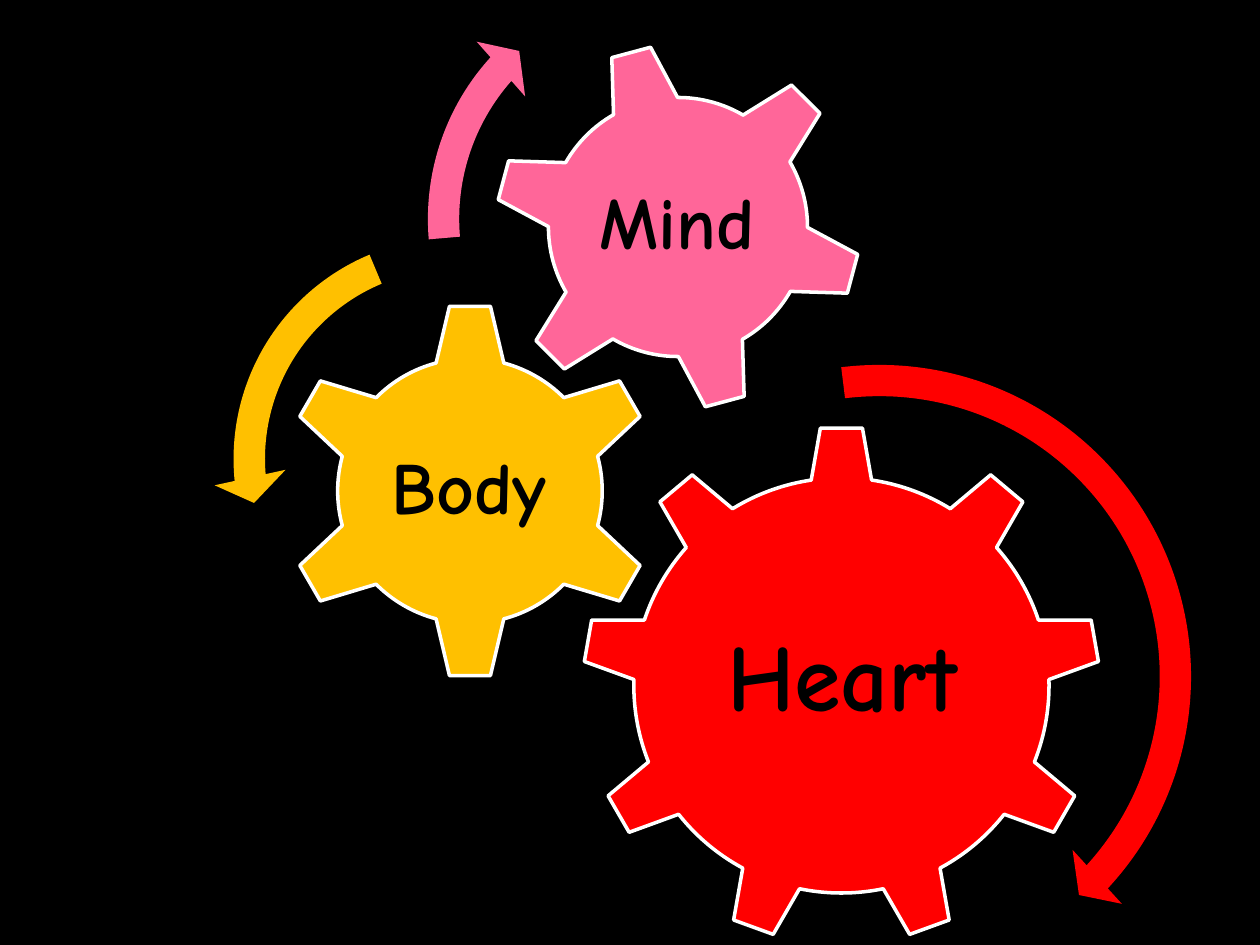
from dataclasses import dataclass

from pptx import Presentation
from pptx.dml.color import RGBColor
from pptx.enum.shapes import MSO_SHAPE
from pptx.enum.text import MSO_ANCHOR, PP_ALIGN
from pptx.util import Emu, Pt

PX_PER_INCH = 126
GEAR_6, GEAR_9 = MSO_SHAPE.GEAR_6, MSO_SHAPE.GEAR_9
CLOCKWISE, COUNTER = MSO_SHAPE.CIRCULAR_ARROW, MSO_SHAPE.LEFT_CIRCULAR_ARROW
MIDDLE, CENTER = MSO_ANCHOR.MIDDLE, PP_ALIGN.CENTER


def px(n):
    return Emu(round(n * 914400 / PX_PER_INCH))


@dataclass(frozen=True)
class Theme:
    font: str = "Comic Neue"
    background: str = "000000"
    ink: str = "000000"
    outline: str = "FFFFFF"
    heart: str = "FF0000"
    body: str = "FFC000"
    mind: str = "FF6699"
    large: int = 54
    medium: int = 42
    outline_width: int = 2


def write(sp, text, *, font, size, color, bold=True, inset=8):
    tf = sp.text_frame
    tf.word_wrap = True
    tf.vertical_anchor = MIDDLE
    tf.margin_left = tf.margin_right = px(inset)
    tf.margin_top = tf.margin_bottom = px(inset)
    p = tf.paragraphs[0]
    p.alignment = CENTER
    p.line_spacing = 0.9
    r = p.add_run()
    r.text = text
    r.font.name = font
    r.font.size = Pt(size)
    r.font.bold = bold
    r.font.color.rgb = RGBColor.from_string(color)


class GearSlide:
    """Draws on one slide in one theme; boxes are left, top, width, height in px."""

    def __init__(self, slide, theme):
        self.slide, self.theme = slide, theme
        fill = slide.background.fill
        fill.solid()
        fill.fore_color.rgb = RGBColor.from_string(theme.background)

    def shape(self, kind, box, color):
        sp = self.slide.shapes.add_shape(kind, *map(px, box))
        sp.shadow.inherit = False
        sp.fill.solid()
        sp.fill.fore_color.rgb = RGBColor.from_string(color)
        return sp

    def gear(self, kind, box, color, rotation=0):
        sp = self.shape(kind, box, color)
        sp.rotation = rotation
        sp.line.color.rgb = RGBColor.from_string(self.theme.outline)
        sp.line.width = Pt(self.theme.outline_width)

    def label(self, text, box, size):
        sp = self.slide.shapes.add_textbox(*map(px, box))
        write(sp, text, font=self.theme.font, size=size, color=self.theme.ink)

    def arrow(self, kind, box, color, adjustments):
        sp = self.shape(kind, box, color)
        sp.line.fill.background()
        for i, value in enumerate(adjustments):
            sp.adjustments[i] = value


def main():
    prs = Presentation()
    prs.slide_width, prs.slide_height = px(1260), px(945)
    theme = Theme()
    s = GearSlide(prs.slides.add_slide(prs.slide_layouts[6]), theme)

    s.gear(GEAR_9, (582, 426, 519, 519), theme.heart)
    s.label("Heart", (687, 547, 311, 267), theme.large)
    s.gear(GEAR_6, (281, 302, 378, 378), theme.body)
    s.label("Body", (375, 398, 188, 186), theme.medium)
    s.gear(GEAR_6, (493, 42, 370, 370), theme.mind, rotation=345)
    s.label("Mind", (573, 122, 208, 208), theme.medium)

    # Adjustments: band width, head angle, end angle, start angle, head width
    s.arrow(CLOCKWISE, (547, 344, 665, 665), theme.heart,
            (0.047, 2.99, 25.57, 157.77, 0.055))
    s.arrow(COUNTER, (213, 217, 484, 484), theme.body,
            (0.065, 4.3, 104.89, 148.38, 0.075))
    s.arrow(CLOCKWISE, (407, -42, 522, 522), theme.mind,
            (0.06, 3.94, 133.14, 105.08, 0.07))

    prs.save("out.pptx")


if __name__ == "__main__":
    main()
